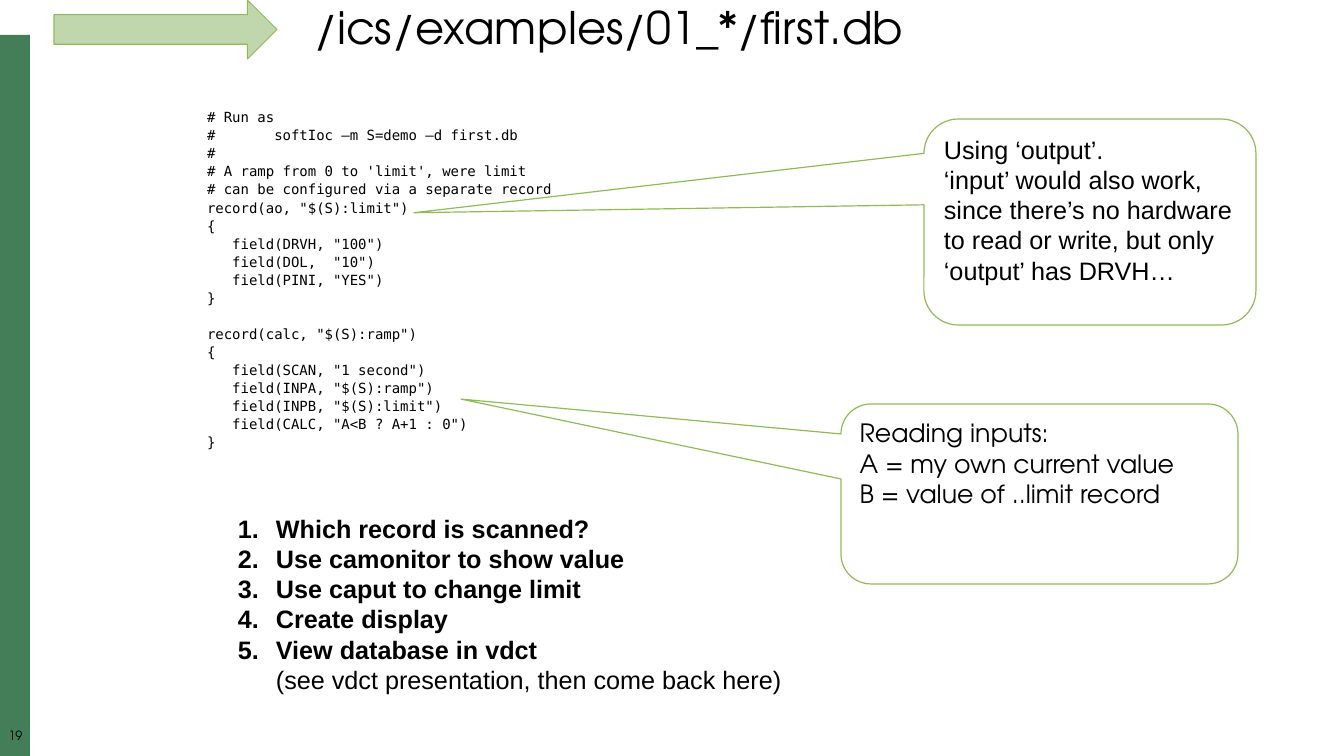
from lxml.etree import SubElement
from pptx import Presentation
from pptx.dml.color import RGBColor
from pptx.enum.shapes import MSO_SHAPE
from pptx.enum.text import MSO_ANCHOR, MSO_AUTO_SIZE, PP_ALIGN
from pptx.oxml.ns import qn
from pptx.util import Pt

PX = 914400 / 100.8
COLOR = {"bar": "447E59", "line": "8FBB55", "arrow": "C0D6AC",
         "paper": "FFFFFF", "text": "000000"}
ROUND, SANS, MONO = "TeX Gyre Adventor", "Arial", "DejaVu Sans Mono"


def place(*box):
    return [round(n * PX) for n in box]


def style(para, face, size):
    para.font.name = face
    para.font.size = Pt(size)
    para.font.color.rgb = RGBColor.from_string(COLOR["text"])


deck = Presentation()
deck.slide_width, deck.slide_height = place(1344, 756)
slide = deck.slides.add_slide(deck.slide_layouts[1])
shapes = slide.shapes
title, body = slide.placeholders

# Title
title.left, title.top, title.width, title.height = place(304, 0, 1004, 59)
frame = title.text_frame
frame.text = "/ics/examples/01_*/first.db"
frame.auto_size = MSO_AUTO_SIZE.NONE
frame.vertical_anchor = MSO_ANCHOR.MIDDLE
para = frame.paragraphs[0]
para.alignment = PP_ALIGN.LEFT
para.line_spacing = 0.9
style(para, ROUND, 32)

# Database code
code = """# Run as
#       softIoc –m S=demo –d first.db
#
# A ramp from 0 to 'limit', were limit
# can be configured via a separate record
record(ao, "$(S):limit")
{
   field(DRVH, "100")
   field(DOL,  "10")
   field(PINI, "YES")
}
record(calc, "$(S):ramp")
{
   field(SCAN, "1 second")
   field(INPA, "$(S):ramp")
   field(INPB, "$(S):limit")
   field(CALC, "A<B ? A+1 : 0")
}"""
body.left, body.top, body.width, body.height = place(197, 105, 449, 607)
frame = body.text_frame
frame.text = code
frame.auto_size = MSO_AUTO_SIZE.NONE
for i, para in enumerate(frame.paragraphs):
    props = para._p.get_or_add_pPr()
    props.set("marL", "0")
    props.set("indent", "0")
    SubElement(props, qn("a:buNone"))
    para.line_spacing = 1.0 if para.text.startswith("record(ao") else 0.9
    # The second record stands one line apart
    gap = 15 if para.text.startswith("record(calc") else 2
    para.space_before = Pt(gap if i else 0)
    style(para, MONO, 10)

# Side bar, callouts and arrow
callout = MSO_SHAPE.ROUNDED_RECTANGULAR_CALLOUT
parts = [
    (MSO_SHAPE.RECTANGLE, (0, 35, 30, 721), "bar", 0, (), "", ROUND),
    (callout, (924, 119, 332, 206), "paper", 0.85, (-2.036, -0.045, 0.167),
     "Using ‘output’.\n‘input’ would also work, since there’s no hardware "
     "to read or write, but only ‘output’ has DRVH…", SANS),
    (callout, (841, 404, 397, 180), "paper", 0.85, (-1.457, -0.527, 0.167),
     "Reading inputs:\vA = my own current value\n"
     "B = value of ..limit record", ROUND),
    (MSO_SHAPE.RIGHT_ARROW, (54, 0, 223, 59), "arrow", 0.75, (), "", ROUND),
]
for kind, box, fill, width, bends, words, face in parts:
    shape = shapes.add_shape(kind, *place(*box))
    shape.shadow.inherit = False
    shape.fill.solid()
    shape.fill.fore_color.rgb = RGBColor.from_string(COLOR[fill])
    if width:
        shape.line.color.rgb = RGBColor.from_string(COLOR["line"])
        shape.line.width = Pt(width)
    else:
        shape.line.fill.background()
    for i, bend in enumerate(bends):
        shape.adjustments[i] = bend
    if words:
        frame = shape.text_frame
        frame.text = words
        frame.word_wrap = True
        frame.vertical_anchor = MSO_ANCHOR.TOP
        for para in frame.paragraphs:
            para.alignment = PP_ALIGN.LEFT
            style(para, face, 18)

# Numbered tasks
tasks = ["Which record is scanned?", "Use camonitor to show value",
         "Use caput to change limit", "Create display",
         "View database in vdct"]
frame = shapes.add_textbox(*place(228, 508, 569, 194)).text_frame
frame.word_wrap = False
for i, task in enumerate(tasks):
    para = frame.add_paragraph() if i else frame.paragraphs[0]
    props = para._p.get_or_add_pPr()
    indent = place(38)[0]
    props.set("marL", str(indent))
    props.set("indent", str(-indent))
    SubElement(props, qn("a:buFont"), typeface="+mj-lt")
    SubElement(props, qn("a:buAutoNum"), type="arabicPeriod")
    style(para, SANS, 18)
    run = para.add_run()
    run.text = task
    run.font.bold = True
para.add_line_break()
note = para.add_run()
note.text = "(see vdct presentation, then come back here)"
note.font.bold = False

# Page number
frame = shapes.add_textbox(*place(0, 730, 31, 17)).text_frame
frame.margin_left = frame.margin_right = 0
frame.margin_top = frame.margin_bottom = 0
frame.word_wrap = True
frame.text = "19"
para = frame.paragraphs[0]
para.alignment = PP_ALIGN.CENTER
para.line_spacing = 0.9
style(para, ROUND, 9)

deck.save("out.pptx")
